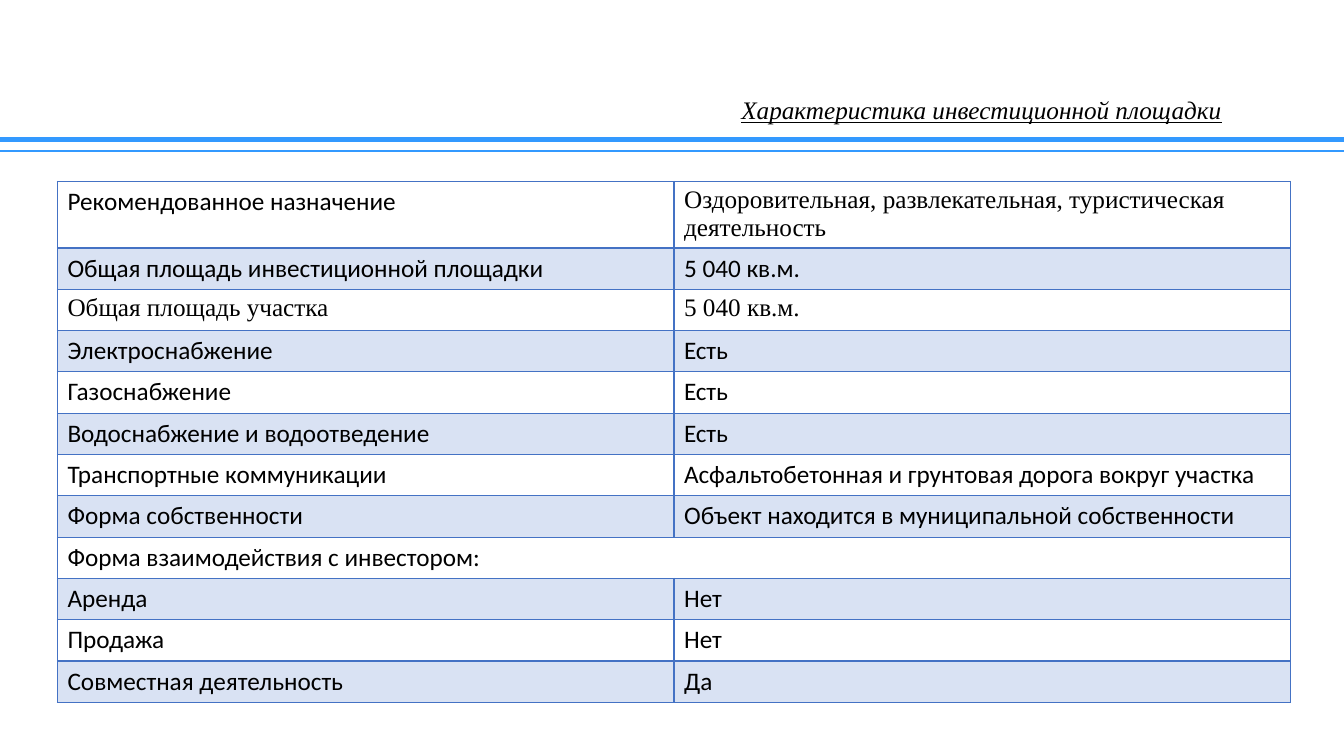
from lxml import etree
from pptx import Presentation
from pptx.dml.color import RGBColor
from pptx.enum.shapes import MSO_CONNECTOR
from pptx.enum.text import MSO_ANCHOR, PP_ALIGN
from pptx.oxml.ns import qn
from pptx.util import Inches, Pt

STRAIGHT = MSO_CONNECTOR.STRAIGHT
MIDDLE = MSO_ANCHOR.MIDDLE
CENTER = PP_ALIGN.CENTER
SERIF = "Times New Roman"
SANS = "Calibri"
BLACK = "000000"
RULE_BLUE = "3399FF"
TABLE_BLUE = "4472C4"


def color(hex_string):
    return RGBColor.from_string(hex_string)


def add_border(cell, side, width):
    properties = cell._tc.get_or_add_tcPr()
    line = etree.SubElement(properties, qn(f"a:ln{side}"), w=str(Pt(width)))
    fill = etree.SubElement(line, qn("a:solidFill"))
    etree.SubElement(fill, qn("a:srgbClr"), val=TABLE_BLUE)


presentation = Presentation()
presentation.slide_width = Inches(13.33)
presentation.slide_height = Inches(7.5)
slide = presentation.slides.add_slide(presentation.slide_layouts[5])

# Title
title = slide.shapes.title
title.left, title.top = Inches(6.67), Inches(0.97)
title.width, title.height = Inches(6.13), Inches(0.27)
title.text_frame.text = "Характеристика инвестиционной площадки"
title.text_frame.vertical_anchor = MIDDLE
paragraph = title.text_frame.paragraphs[0]
paragraph.alignment = CENTER
paragraph.line_spacing = 0.9
font = paragraph.runs[0].font
font.name, font.size = SERIF, Pt(18)
font.italic = font.underline = True
font.color.rgb = color(BLACK)

# Double rule under the title
for y, width in [(1.38, 3.5), (1.5, 1.5)]:
    rule = slide.shapes.add_connector(
        STRAIGHT, Inches(0), Inches(y), Inches(13.33), Inches(y))
    rule.line.color.rgb = color(RULE_BLUE)
    rule.line.width = Pt(width)
    etree.SubElement(rule._element.spPr, qn("a:effectLst"))

# Site characteristics: label, value, and the font of each
rows = [
    ("Рекомендованное назначение",
     "Оздоровительная, развлекательная, туристическая деятельность", SANS, SERIF),
    ("Общая площадь инвестиционной площадки", "5 040 кв.м.", SANS, SANS),
    ("Общая площадь участка", "5 040 кв.м.", SERIF, SERIF),
    ("Электроснабжение", "Есть", SANS, SANS),
    ("Газоснабжение", "Есть", SANS, SANS),
    ("Водоснабжение и водоотведение", "Есть", SANS, SANS),
    ("Транспортные коммуникации",
     "Асфальтобетонная и грунтовая дорога вокруг участка", SANS, SANS),
    ("Форма собственности",
     "Объект находится в муниципальной собственности", SANS, SANS),
    ("Форма взаимодействия с инвестором:", "", SANS, SANS),
    ("Аренда", "Нет", SANS, SANS),
    ("Продажа", "Нет", SANS, SANS),
    ("Совместная деятельность", "Да", SANS, SANS),
]
table = slide.shapes.add_table(
    len(rows), 2, Inches(0.57), Inches(1.8), Inches(12.23), Inches(5.17)).table
for column in table.columns:
    column.width = Inches(6.115)

for row_index, (label, value, label_font, value_font) in enumerate(rows):
    table.rows[row_index].height = Inches(0.41 if row_index else 0.66)
    for column_index, (text, font_name) in enumerate(
            [(label, label_font), (value, value_font)]):
        cell = table.cell(row_index, column_index)
        cell.text_frame.text = text
        font = cell.text_frame.paragraphs[0].font
        for run in cell.text_frame.paragraphs[0].runs:
            font = run.font
        font.name, font.size, font.bold = font_name, Pt(18), False
        font.color.rgb = color(BLACK)

        # Borders, with a heavier line below the first row
        for side in "LRTB":
            heavy = (row_index, side) in [(0, "B"), (1, "T")]
            add_border(cell, side, 2 if heavy else 1)

        # Bands on every second row
        if row_index % 2:
            cell.fill.solid()
            cell.fill.fore_color.rgb = color(TABLE_BLUE)
            band = cell._tc.tcPr.find(qn("a:solidFill"))
            etree.SubElement(band[0], qn("a:alpha"), val="20000")
        else:
            cell.fill.background()

    if not value:
        table.cell(row_index, 0).merge(table.cell(row_index, 1))

presentation.save("out.pptx")
